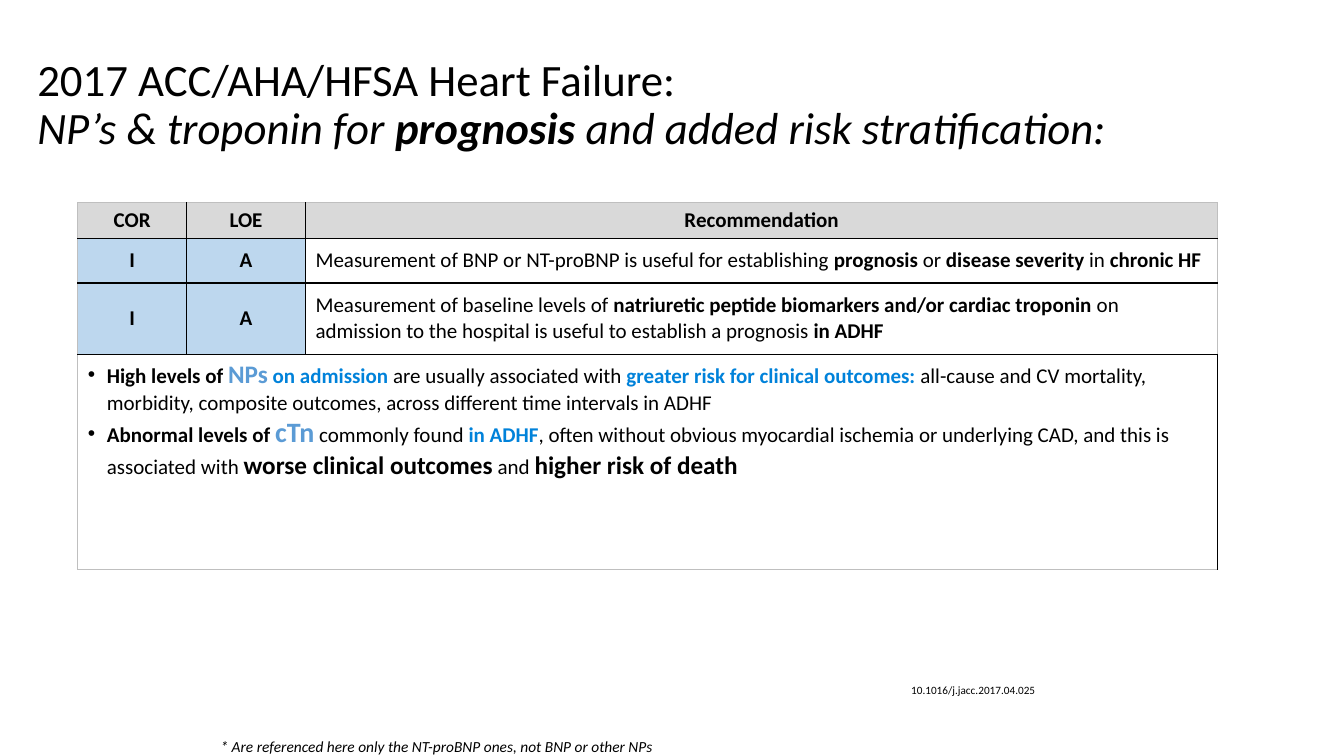
from lxml.etree import SubElement
from pptx import Presentation
from pptx.dml.color import RGBColor
from pptx.enum.shapes import MSO_SHAPE
from pptx.enum.text import MSO_ANCHOR, PP_ALIGN
from pptx.oxml.ns import qn
from pptx.util import Cm, Pt

COLORS = {
    "black": "000000", "white": "FFFFFF", "header": "D9D9D9", "grade": "BDD7EE",
    "frame": "BFBFBF", "accent": "0082DA", "marker": "5B9BD5",
}
BOLD = {"bold": True}
ACCENT = {"bold": True, "color": "accent"}
LARGE = {"bold": True, "size": 18}
COLUMN_WIDTHS = (2.74, 3, 22.99)
ROW_HEIGHTS = (0.9, 1.12, 1.8, 5.41)
HEADINGS = ("COR", "LOE", "Recommendation")
RECOMMENDATIONS = (
    (
        ("Measurement of BNP or NT-proBNP is useful for establishing ", {}),
        ("prognosis", BOLD), (" or ", {}), ("disease severity ", BOLD),
        ("in ", {}), ("chronic HF", BOLD),
    ),
    (
        ("Measurement of baseline levels of ", {}),
        ("natriuretic peptide biomarkers and/or cardiac troponin ", BOLD),
        ("on admission to the hospital is useful to establish a prognosis ", {}),
        ("in ADHF", BOLD),
    ),
)
FINDINGS = (
    (
        ("High levels of ", BOLD),
        ("NPs", {"bold": True, "size": 18, "color": "marker"}),
        (" on admission ", ACCENT),
        ("are usually associated with ", {}),
        ("greater risk for clinical outcomes: ", ACCENT),
        ("all-cause and CV mortality, morbidity, composite outcomes, "
         "across different time intervals in ADHF", {}),
    ),
    (
        ("Abnormal levels of ", BOLD),
        ("cTn", {"bold": True, "size": 20, "color": "marker"}),
        (" ", ACCENT),
        ("commonly found ", {}),
        ("in ADHF", ACCENT),
        (", often without obvious myocardial ischemia or underlying CAD, "
         "and this is associated with ", {}),
        ("worse clinical outcomes", LARGE), (" ", BOLD), ("and ", {}),
        ("higher risk of death", LARGE),
    ),
)


def rgb(name):
    """Return the named colour."""
    return RGBColor.from_string(COLORS[name])


def add_text(para, text, size=15, color="black", bold=False, italic=False):
    """Append one formatted span to a paragraph."""
    span = para.add_run()
    span.text = text
    font = span.font
    font.name, font.size = "Calibri", Pt(size)
    font.bold, font.italic = bold, italic
    font.color.rgb = rgb(color)


def add_spans(para, spans):
    """Append a sequence of (text, format) spans."""
    for text, style in spans:
        add_text(para, text, **style)


def add_bullet(para):
    """Give a paragraph a bullet with a hanging indent."""
    properties = para._p.get_or_add_pPr()
    properties.set("marL", str(Cm(0.48)))
    properties.set("indent", str(-Cm(0.48)))
    SubElement(properties, qn("a:buFont"), typeface="Arial")
    SubElement(properties, qn("a:buChar"), char="•")


def add_border(cell, side, color, width):
    """Draw one side of a cell."""
    line = SubElement(cell._tc.get_or_add_tcPr(), qn(f"a:ln{side}"), w=str(Pt(width)))
    fill = SubElement(line, qn("a:solidFill"))
    SubElement(fill, qn("a:srgbClr"), val=COLORS[color])


def format_cell(cell, row, column):
    """Set the borders, fill and anchor that a cell's place calls for."""
    last_row, last_column = len(ROW_HEIGHTS) - 1, len(COLUMN_WIDTHS) - 1
    edges = {"L": column == 0, "R": column == last_column,
             "T": row == 0, "B": row == last_row}
    for side, is_outer in edges.items():
        add_border(cell, side, "frame" if is_outer else "black", 0.75 if is_outer else 1)
    if row == 0:
        fill = "header"
    else:
        fill = "grade" if column < last_column and row < last_row else None
    if fill:
        cell.fill.solid()
        cell.fill.fore_color.rgb = rgb(fill)
    else:
        cell.fill.background()
    cell.vertical_anchor = MSO_ANCHOR.MIDDLE if 0 < row < last_row else MSO_ANCHOR.TOP


def add_centered(cell, text):
    """Write a bold centred label in a cell."""
    para = cell.text_frame.paragraphs[0]
    para.alignment = PP_ALIGN.CENTER
    add_text(para, text, bold=True)


def add_guideline_table(page):
    """Build the table of recommendations and findings."""
    frame = page.shapes.add_table(
        len(ROW_HEIGHTS), len(COLUMN_WIDTHS), Cm(1.96), Cm(5.11),
        Cm(sum(COLUMN_WIDTHS)), Cm(sum(ROW_HEIGHTS)))
    table = frame.table
    table.first_row = table.horz_banding = False
    for column, width in zip(table.columns, COLUMN_WIDTHS):
        column.width = Cm(width)
    for row, height in zip(table.rows, ROW_HEIGHTS):
        row.height = Cm(height)
    for row in range(len(ROW_HEIGHTS)):
        for column in range(len(COLUMN_WIDTHS)):
            format_cell(table.cell(row, column), row, column)
    for column, heading in enumerate(HEADINGS):
        add_centered(table.cell(0, column), heading)
    for row, spans in enumerate(RECOMMENDATIONS, start=1):
        add_centered(table.cell(row, 0), "I")
        add_centered(table.cell(row, 1), "A")
        add_spans(table.cell(row, 2).text_frame.paragraphs[0], spans)
    findings = table.cell(3, 0)
    findings.merge(table.cell(3, 2))
    for index, spans in enumerate(FINDINGS):
        body = findings.text_frame
        para = body.add_paragraph() if index else body.paragraphs[0]
        add_bullet(para)
        add_spans(para, spans)


def add_title(page):
    """Add the two-line title."""
    box = page.shapes.add_textbox(Cm(0.69), Cm(1.24), Cm(31.27), Cm(2.87))
    body = box.text_frame
    body.word_wrap = True
    body.vertical_anchor = MSO_ANCHOR.MIDDLE
    first, second = body.paragraphs[0], body.add_paragraph()
    first.line_spacing = second.line_spacing = 0.9
    add_text(first, "2017 ACC/AHA/HFSA Heart Failure:", size=32)
    add_text(second, "NP’s & troponin for ", size=32, italic=True)
    add_text(second, "prognosis", size=32, italic=True, bold=True)
    add_text(second, " and added risk stratification:", size=32, italic=True)


def add_footnote(page):
    """Add the footnote at the bottom edge."""
    box = page.shapes.add_textbox(Cm(5.56), Cm(18.57), Cm(11), Cm(0.48))
    body = box.text_frame
    body.word_wrap = False
    body.margin_left = body.margin_right = body.margin_top = body.margin_bottom = 0
    add_text(body.paragraphs[0],
             "* Are referenced here only the NT-proBNP ones, not BNP or other NPs",
             size=11, italic=True)


def add_citation(page):
    """Add the white box with the article identifier."""
    box = page.shapes.add_shape(
        MSO_SHAPE.RECTANGLE, Cm(20.4), Cm(17.07), Cm(8.26), Cm(0.64))
    box.shadow.inherit = False
    box.fill.solid()
    box.fill.fore_color.rgb = rgb("white")
    box.line.fill.background()
    box.text_frame.vertical_anchor = MSO_ANCHOR.MIDDLE
    para = box.text_frame.paragraphs[0]
    para.alignment = PP_ALIGN.CENTER
    add_text(para, "10.1016/j.jacc.2017.04.025", size=8)


def main():
    """Build and save the slide."""
    deck = Presentation()
    deck.slide_width, deck.slide_height = Cm(33.87), Cm(19.05)
    page = deck.slides.add_slide(deck.slide_layouts[6])
    add_title(page)
    add_guideline_table(page)
    add_footnote(page)
    add_citation(page)
    deck.save("out.pptx")


if __name__ == "__main__":
    main()
